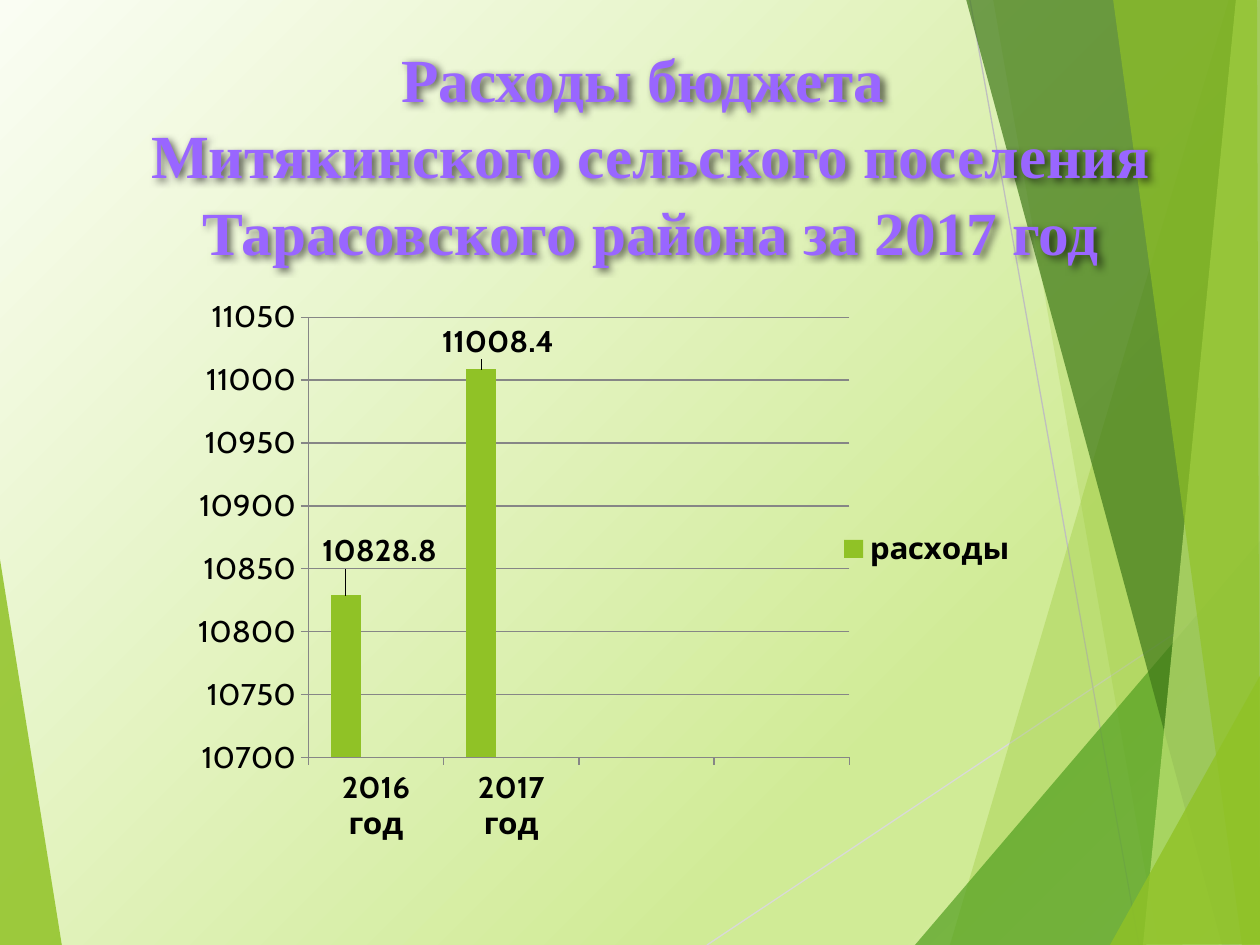
import lxml.etree
import pptx
import pptx.chart.data
import pptx.dml.color
import pptx.enum.chart
import pptx.enum.shapes
import pptx.enum.text
import pptx.oxml
import pptx.oxml.ns
import pptx.util

EMU_PER_PX = 914400 / 126
COLORS = {
    "lime": "90C226", "green": "54A021", "forest": "3F7819", "pale": "C0E474",
    "gold": "E6B91E", "violet": "9966FF", "black": "000000", "grid": "868686",
    "line_light": "D9D9D9", "line_dark": "BFBFBF",
}
BACKGROUND_STOPS = [(0, "FAFDF3"), (74, "D0EB96"), (83, "D0EB96"), (100, "DFF1B9")]
FACETS = [
    ("lime", 30, [(1229, 0), (950, 945), (1262, 946), (1261, 1)]),
    ("lime", 20, [(993, -1), (1158, 945), (1261, 945), (1261, -1)]),
    ("green", 72, [(915, 945), (1260, 541), (1261, 945)]),
    ("forest", 70, [(966, -1), (1222, 945), (1261, 944), (1261, -1)]),
    ("pale", 70, [(1236, -1), (1143, 945), (1261, 945), (1260, -1)]),
    ("lime", 65, [(1113, -1), (1242, 945), (1260, 945), (1257, -1)]),
    ("lime", 80, [(1110, 945), (1261, 674), (1261, 944)]),
]
TITLE = ["Расходы бюджета ", "Митякинского сельского поселения Тарасовского района за 2017 год"]
CATEGORIES = ["2016 год", "2017 год", "", ""]
SERIES = [
    ("расходы", [10828.8, 11008.4, None, None], "lime"),
    ("Series 2", [None] * 4, "green"),
    ("Series 3", [None] * 4, "gold"),
]
LABEL_OFFSETS = [(0.04, -0.04), (0.02, -0.01)]


def px(value):
    return pptx.util.Emu(round(value * EMU_PER_PX))


def rgb(name):
    return pptx.dml.color.RGBColor.from_string(COLORS[name])


def xml(text):
    prefix, rest = text.split(" ", 1) if " " in text.split(">")[0] else text.split(">", 1)
    separator = " " if " " in text.split(">")[0] else ">"
    return pptx.oxml.parse_xml(f"{prefix} {pptx.oxml.ns.nsdecls('a', 'c')}{separator}{rest}")


def manual_layout(x, y, size=None):
    inner = '<c:layoutTarget val="inner"/><c:xMode val="edge"/><c:yMode val="edge"/>' if size else ""
    extent = f'<c:w val="{size[0]}"/><c:h val="{size[1]}"/>' if size else ""
    return xml(f'<c:layout><c:manualLayout>{inner}<c:x val="{x}"/><c:y val="{y}"/>'
               f"{extent}</c:manualLayout></c:layout>")


class SlideBuilder:
    title_font = "Times New Roman"
    chart_font = "Cabin"

    def __init__(self, slide):
        self.slide = slide

    def background(self, stops):
        fill = self.slide.background.fill
        fill.gradient()
        fill.gradient_angle = 315
        stop_list = self.slide._element.find(".//" + pptx.oxml.ns.qn("a:gsLst"))
        for stop in list(stop_list):
            stop_list.remove(stop)
        for position, color in stops:
            stop_list.append(xml(f'<a:gs pos="{position * 1000}"><a:srgbClr val="{color}"/></a:gs>'))

    def facet(self, color, opacity, points):
        builder = self.slide.shapes.build_freeform(*points[0], scale=EMU_PER_PX)
        builder.add_line_segments(points[1:], close=True)
        shape = builder.convert_to_shape()
        shape.shadow.inherit = False
        shape.line.fill.background()
        shape.fill.solid()
        shape.fill.fore_color.rgb = rgb(color)
        color_element = shape._element.spPr.find(".//" + pptx.oxml.ns.qn("a:srgbClr"))
        color_element.append(xml(f'<a:alpha val="{opacity * 1000}"/>'))

    def line(self, start, end, color):
        connector = self.slide.shapes.add_connector(
            pptx.enum.shapes.MSO_CONNECTOR.STRAIGHT, *map(px, start + end))
        connector.line.color.rgb = rgb(color)
        connector.line.width = pptx.util.Pt(0.75)
        connector._element.spPr.append(xml("<a:effectLst></a:effectLst>"))

    def title(self, texts, box):
        shape = self.slide.shapes.add_textbox(*map(px, box))
        shape._element.spPr.append(xml(
            '<a:effectLst><a:outerShdw blurRad="50800" dist="25400" dir="2700000">'
            '<a:srgbClr val="000000"><a:alpha val="60000"/></a:srgbClr></a:outerShdw></a:effectLst>'))
        frame = shape.text_frame
        frame.word_wrap = True
        frame.text = "\n".join(texts)
        for paragraph in frame.paragraphs:
            paragraph.alignment = pptx.enum.text.PP_ALIGN.CENTER
            paragraph.line_spacing = 1.04
            self.font(paragraph.font, self.title_font, 35, "violet", True)

    def font(self, font, name, size, color, bold):
        font.name = name
        font.size = pptx.util.Pt(size)
        font.bold = bold
        font.color.rgb = rgb(color)

    def chart(self, box):
        data = pptx.chart.data.CategoryChartData()
        data.categories = CATEGORIES
        for name, values, _ in SERIES:
            data.add_series(name, values)
        chart = self.slide.shapes.add_chart(
            pptx.enum.chart.XL_CHART_TYPE.COLUMN_CLUSTERED, *map(px, box), data).chart
        chart.has_title = False
        self.font(chart.font, self.chart_font, 18, "black", False)
        plot = chart.plots[0]
        plot.gap_width = 150
        plot.vary_by_categories = False
        for series, (_, _, color) in zip(plot.series, SERIES):
            series.format.fill.solid()
            series.format.fill.fore_color.rgb = rgb(color)
        self.axes(chart)
        self.labels(plot.series[0])
        self.legend(chart)
        plot_area = chart._chartSpace.chart.plotArea
        for layout in plot_area.findall(pptx.oxml.ns.qn("c:layout")):
            plot_area.remove(layout)
        plot_area.insert(0, manual_layout(0.141, 0.066, (0.644, 0.825)))

    def axes(self, chart):
        value_axis, category_axis = chart.value_axis, chart.category_axis
        value_axis.minimum_scale = 10700
        value_axis.maximum_scale = 11050
        value_axis.major_unit = 50
        value_axis.has_major_gridlines = True
        value_axis.tick_labels.number_format = "General"
        value_axis.tick_labels.number_format_is_linked = False
        for axis, bold in ((value_axis, False), (category_axis, True)):
            axis.major_tick_mark = pptx.enum.chart.XL_TICK_MARK.OUTSIDE
            self.font(axis.tick_labels.font, self.chart_font, 18, "black", bold)
        for part in (value_axis, category_axis, value_axis.major_gridlines):
            part.format.line.color.rgb = rgb("grid")
            part.format.line.width = pptx.util.Pt(0.75)

    def labels(self, series):
        for index, offset in enumerate(LABEL_OFFSETS):
            label = series.points[index].data_label
            self.font(label.font, self.chart_font, 18, "black", True)
            label.position = pptx.enum.chart.XL_LABEL_POSITION.OUTSIDE_END
            label._dLbl.insert(1, manual_layout(*offset))
        series.data_labels.show_value = True

    def legend(self, chart):
        chart.has_legend = True
        legend = chart.legend
        legend.position = pptx.enum.chart.XL_LEGEND_POSITION.RIGHT
        legend.include_in_layout = False
        self.font(legend.font, self.chart_font, 18, "black", True)
        for index in (1, 2):
            legend._element.insert(index, xml(
                f'<c:legendEntry><c:idx val="{index}"/><c:delete val="1"/></c:legendEntry>'))


def main():
    presentation = pptx.Presentation()
    presentation.slide_width, presentation.slide_height = px(1260), px(945)
    builder = SlideBuilder(presentation.slides.add_slide(presentation.slide_layouts[6]))
    builder.background(BACKGROUND_STOPS)
    builder.facet("lime", 85, [(-1, 553), (62, 946), (-1, 945)])
    builder.line((707, 945), (1261, 576), "line_light")
    builder.line((970, 0), (1139, 945), "line_dark")
    for facet in FACETS:
        builder.facet(*facet)
    builder.title(TITLE, (84, 32, 1134, 158))
    builder.chart((190, 282, 840, 560))
    presentation.save("out.pptx")


if __name__ == "__main__":
    main()
